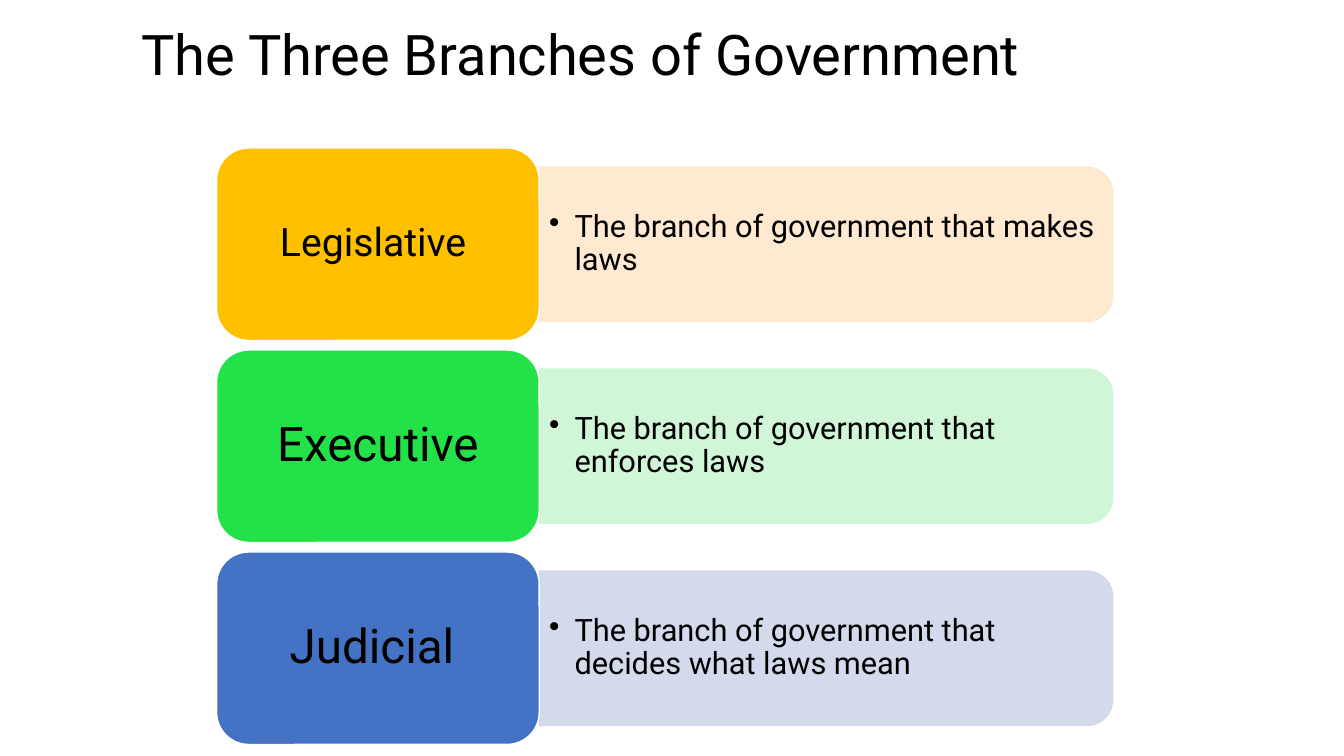
from lxml import etree
from pptx import Presentation
from pptx.dml.color import RGBColor
from pptx.enum.shapes import MSO_SHAPE
from pptx.enum.text import MSO_ANCHOR, PP_ALIGN
from pptx.oxml.ns import qn
from pptx.util import Cm, Pt

CARD = MSO_SHAPE.ROUNDED_RECTANGLE
PANEL = MSO_SHAPE.ROUND_2_SAME_RECTANGLE
TOP, MIDDLE = MSO_ANCHOR.TOP, MSO_ANCHOR.MIDDLE
LEFT, CENTER = PP_ALIGN.LEFT, PP_ALIGN.CENTER

BLACK = RGBColor(0x00, 0x00, 0x00)
WHITE = RGBColor(0xFF, 0xFF, 0xFF)
GOLD = RGBColor(0xFF, 0xC0, 0x00)
PEACH = RGBColor(0xFF, 0xE8, 0xCC)
GREEN = RGBColor(0x23, 0xE1, 0x48)
MINT = RGBColor(0xCC, 0xF6, 0xD3)
BLUE = RGBColor(0x44, 0x72, 0xC4)
MIST = RGBColor(0xCF, 0xD6, 0xEA)

BRANCHES = [
    ("Legislative ", 28, GOLD, PEACH, "The branch of government that makes laws"),
    ("Executive", 34, GREEN, MINT, "The branch of government that enforces laws"),
    ("Judicial ", 34, BLUE, MIST, "The branch of government that decides what laws mean"),
]

# All lengths in centimetres
CARD_X, CARD_Y, CARD_W, CARD_H = 5.46, 3.73, 8.13, 4.85
PITCH = 5.09
PANEL_W, PANEL_H = 14.45, 3.89
TEXT_W, TEXT_H = 14.25, 3.5


def add_block(kind, x, y, w, h, fill, edge):
    block = slide.shapes.add_shape(kind, Cm(x), Cm(y), Cm(w), Cm(h))
    block.shadow.inherit = False
    block.fill.solid()
    block.fill.fore_color.rgb = fill
    block.line.color.rgb = edge
    block.line.width = Pt(1)
    return block


def write(shape, text, size, align, anchor, spacing):
    """Put one black paragraph into the shape and return it."""
    frame = shape.text_frame
    frame.word_wrap = True
    frame.vertical_anchor = anchor
    para = frame.paragraphs[0]
    para.text = text
    para.alignment = align
    para.line_spacing = spacing
    para.font.name = "Roboto"
    para.font.size = Pt(size)
    para.font.color.rgb = BLACK
    return para


deck = Presentation()
deck.slide_width, deck.slide_height = Cm(33.87), Cm(19.05)
slide = deck.slides.add_slide(deck.slide_layouts[6])

for row, (name, size, color, tint, duty) in enumerate(BRANCHES):
    top = CARD_Y + row * PITCH
    mid = top + CARD_H / 2
    right = CARD_X + CARD_W

    # The panel is upright before its quarter turn
    panel = add_block(PANEL, right + (PANEL_W - PANEL_H) / 2, mid - PANEL_W / 2,
                      PANEL_H, PANEL_W, tint, tint)
    panel.rotation = 90
    for paint in list(panel._element.spPr.iter(qn("a:srgbClr"))):
        etree.SubElement(paint, qn("a:alpha"), val="90000")

    note = slide.shapes.add_textbox(Cm(right), Cm(mid - TEXT_H / 2), Cm(TEXT_W), Cm(TEXT_H))
    para = write(note, duty, 22, LEFT, MIDDLE, 0.9)
    props = para._p.get_or_add_pPr()
    props.set("marL", str(Cm(0.64)))
    props.set("indent", str(-Cm(0.64)))
    bullet = etree.Element(qn("a:buChar"), char="•")
    props.find(qn("a:defRPr")).addprevious(bullet)

    card = add_block(CARD, CARD_X, top, CARD_W, CARD_H, color, WHITE)
    write(card, name, size, CENTER, MIDDLE, 0.9)

title = slide.shapes.add_textbox(Cm(2.36), Cm(0.36), Cm(24.89), Cm(3.68))
write(title, "The Three Branches of Government ", 40, CENTER, TOP, 1.0)

deck.save("out.pptx")
